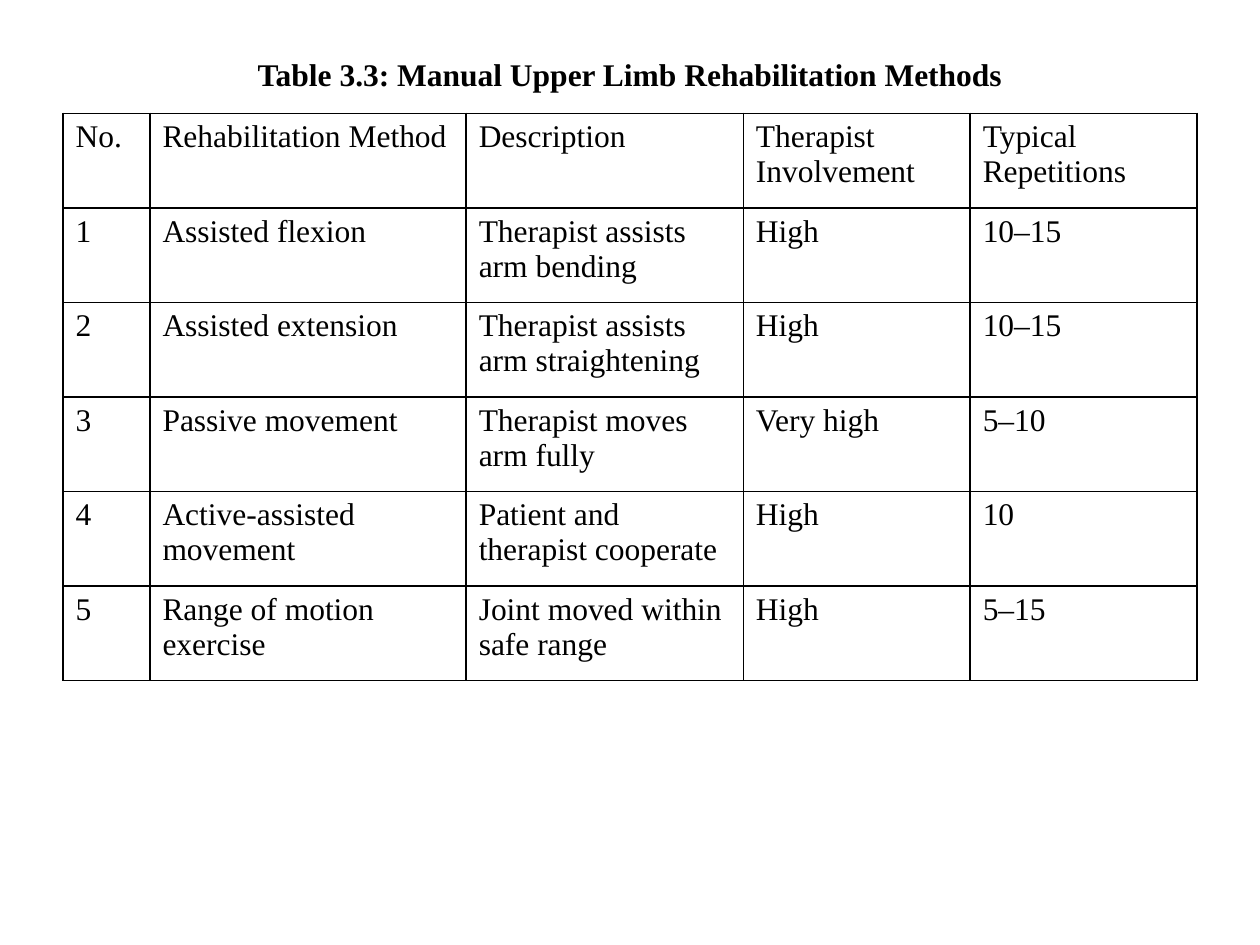
from typing import NamedTuple

from lxml import etree
from pptx import Presentation
from pptx.dml.color import RGBColor
from pptx.enum.text import MSO_ANCHOR, PP_ALIGN
from pptx.oxml.ns import qn
from pptx.util import Inches, Pt

BLACK = RGBColor(0, 0, 0)
FONT = "Times New Roman"
SIZE = Pt(18)
MIDDLE = MSO_ANCHOR.MIDDLE
CENTER = PP_ALIGN.CENTER
LEFT, WIDTH = Inches(0.5), Inches(9)
ROW_HEIGHT = Inches(0.75)


class Column(NamedTuple):
    head: str
    width: float


class Method(NamedTuple):
    name: str
    detail: str
    effort: str
    reps: str


COLUMNS = [
    Column("No.", 0.69),
    Column("Rehabilitation Method", 2.51),
    Column("Description", 2.2),
    Column("Therapist Involvement", 1.8),
    Column("Typical Repetitions", 1.8),
]
METHODS = [
    Method("Assisted flexion", "Therapist assists arm bending", "High", "10–15"),
    Method("Assisted extension", "Therapist assists arm straightening", "High", "10–15"),
    Method("Passive movement", "Therapist moves arm fully", "Very high", "5–10"),
    Method("Active-assisted movement", "Patient and therapist cooperate", "High", "10"),
    Method("Range of motion exercise", "Joint moved within safe range", "High", "5–15"),
]


def write(frame, text: str, bold: bool = False) -> None:
    frame.text = text
    font = frame.paragraphs[0].font
    font.name, font.size, font.bold = FONT, SIZE, bold
    font.color.rgb = BLACK


def add_borders(cell) -> None:
    props = cell._tc.get_or_add_tcPr()
    for side in ("a:lnL", "a:lnR", "a:lnT", "a:lnB"):
        line = etree.SubElement(props, qn(side), w=str(Pt(1)))
        fill = etree.SubElement(line, qn("a:solidFill"))
        etree.SubElement(fill, qn("a:srgbClr"), val=str(BLACK))


def add_title(slide, text: str) -> None:
    frame = slide.shapes.add_textbox(LEFT, Inches(0.26), WIDTH, Inches(0.65)).text_frame
    frame.word_wrap = True
    frame.vertical_anchor = MIDDLE
    write(frame, text, bold=True)
    frame.paragraphs[0].alignment = CENTER


def add_grid(slide, columns: list[Column], methods: list[Method]) -> None:
    rows = [[column.head for column in columns]]
    rows += [[str(number), *method] for number, method in enumerate(methods, 1)]
    table = slide.shapes.add_table(
        len(rows), len(columns), LEFT, Inches(0.9), WIDTH, ROW_HEIGHT * len(rows)
    ).table
    table.first_row = table.horz_banding = False
    for index, column in enumerate(columns):
        table.columns[index].width = Inches(column.width)
    for row, texts in zip(table.rows, rows):
        row.height = ROW_HEIGHT
        for cell, text in zip(row.cells, texts):
            write(cell.text_frame, text)
            add_borders(cell)
            cell.fill.background()


def main() -> None:
    deck = Presentation()
    deck.slide_width, deck.slide_height = Inches(10), Inches(7.5)
    slide = deck.slides.add_slide(deck.slide_layouts[6])
    add_title(slide, "Table 3.3: Manual Upper Limb Rehabilitation Methods")
    add_grid(slide, COLUMNS, METHODS)
    deck.save("out.pptx")


if __name__ == "__main__":
    main()
